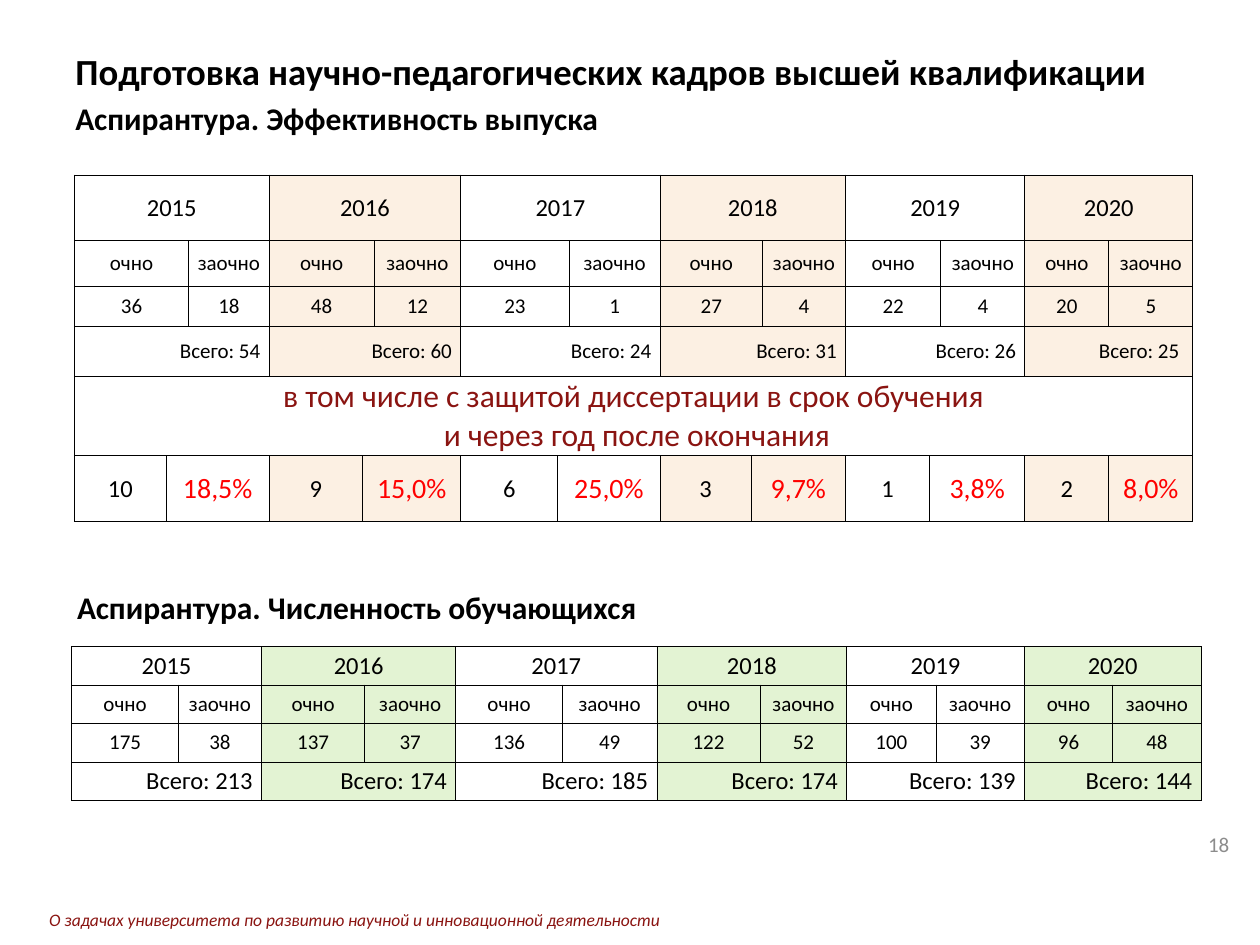
from itertools import cycle

from lxml.etree import SubElement
from pptx import Presentation
from pptx.dml.color import RGBColor
from pptx.enum.text import MSO_ANCHOR as Anchor, PP_ALIGN as Align
from pptx.oxml import parse_xml
from pptx.oxml.ns import nsdecls, qn
from pptx.util import Pt

BLACK = RGBColor(0, 0, 0)
MAROON = RGBColor(0x8A, 0x14, 0x11)
RED = RGBColor(0xFF, 0, 0)
GRAY = RGBColor(0x8C, 0x8C, 0x8C)
PEACH = RGBColor(0xF5, 0xC4, 0x91)
GREEN = RGBColor(0x92, 0xD0, 0x50)

YEARS = ["2015", "2016", "2017", "2018", "2019", "2020"]
MODES = ["очно", "заочно"] * 6
BIG, SMALL = [(14, BLACK)], [(12, BLACK)]


def style(para, size, color, align=Align.LEFT, bold=False, italic=False):
    para.alignment = align
    font = para.font
    font.name = "Calibri"
    font.size = Pt(size)
    font.color.rgb = color
    font.bold = bold
    font.italic = italic


def add_text(slide, box, lines, anchor=Anchor.MIDDLE):
    frame = slide.shapes.add_textbox(*map(Pt, box)).text_frame
    frame.word_wrap = True
    frame.vertical_anchor = anchor
    frame.text = "\n".join(text for text, _ in lines)
    for para, (_, look) in zip(frame.paragraphs, lines):
        style(para, **look)
    return frame


def add_border(cell):
    props = cell._tc.get_or_add_tcPr()
    for side in "LRTB":
        props.append(parse_xml(
            f'<a:ln{side} {nsdecls("a")} w="6350"><a:solidFill>'
            f'<a:srgbClr val="{BLACK}"/></a:solidFill></a:ln{side}>'))


def paint(cell, tint):
    if tint is None:
        cell.fill.background()
        return
    cell.fill.solid()
    cell.fill.fore_color.rgb = tint
    color = cell._tc.tcPr.find(qn("a:solidFill")).find(qn("a:srgbClr"))
    SubElement(color, qn("a:alpha")).set("val", "25000")


def add_grid(slide, left, top, cols, rows, per, tint):
    high = sum(row[0] for row in rows)
    shape = slide.shapes.add_table(
        len(rows), len(cols), Pt(left), Pt(top), Pt(sum(cols)), Pt(high))
    table = shape.table
    table.first_row = table.horz_banding = False
    for col, wide in zip(table.columns, cols):
        col.width = Pt(wide)
    for r, (tall, spans, texts, align, looks) in enumerate(rows):
        table.rows[r].height = Pt(tall)
        start = 0
        for span, text, (size, color) in zip(spans, texts, cycle(looks)):
            shade = tint if start // per % 2 else None
            for c in range(start, start + span):
                cell = table.cell(r, c)
                cell.margin_left = cell.margin_right = Pt(5)
                cell.margin_top = cell.margin_bottom = 0
                cell.vertical_anchor = Anchor.MIDDLE
                add_border(cell)
                paint(cell, shade)
                if c == start:
                    cell.text = text
                for para in cell.text_frame.paragraphs:
                    style(para, size, color, align)
            if span > 1:
                last = table.cell(r, start + span - 1)
                table.cell(r, start).merge(last)
            start += span


def totals(counts):
    return [f"Всего: {count}" for count in counts]


def add_output(slide, left, top):
    cols = [52.5, 6.5, 46, 53.5, 6.5, 49.5, 55.5, 6.5, 52,
            52, 6.5, 47.5, 48, 6.5, 48, 48, 48]
    year = [3] * 5 + [2]
    mode = [2, 1] * 5 + [1, 1]
    share = [1, 2] * 5 + [1, 1]
    counts = ["36", "18", "48", "12", "23", "1",
              "27", "4", "22", "4", "20", "5"]
    banner = ("в том числе с защитой диссертации в срок обучения\n"
              " и через год после окончания")
    shares = ["10", "18,5%", "9", "15,0%", "6", "25,0%",
              "3", "9,7%", "1", "3,8%", "2", "8,0%"]
    sums = totals([54, 60, 24, 31, 26, "25 "])
    rows = [
        (37.5, year, YEARS, Align.CENTER, BIG),
        (26, mode, MODES, Align.CENTER, SMALL),
        (23, mode, counts, Align.CENTER, SMALL),
        (28.5, year, sums, Align.RIGHT, SMALL),
        (45.5, [17], [banner], Align.CENTER, [(18, MAROON)]),
        (37.5, share, shares, Align.CENTER, [(14, BLACK), (16, RED)]),
    ]
    add_grid(slide, left, top, cols, rows, 3, PEACH)


def add_enrol(slide, left, top):
    cols = [61, 47.5, 59, 52, 61, 54, 59, 49.5, 51, 50.5, 50.5, 50.5]
    pair, single = [2] * 6, [1] * 12
    counts = ["175", "38", "137", "37", "136", "49",
              "122", "52", "100", "39", "96", "48"]
    sums = totals([213, 174, 185, 174, 139, 144])
    rows = [
        (22, pair, YEARS, Align.CENTER, BIG),
        (22, single, MODES, Align.CENTER, SMALL),
        (22, single, counts, Align.CENTER, SMALL),
        (22, pair, sums, Align.RIGHT, BIG),
    ]
    add_grid(slide, left, top, cols, rows, 2, GREEN)


def add_title(slide, box):
    frame = add_text(slide, box, [
        ("Подготовка научно-педагогических кадров высшей квалификации",
         dict(size=21, color=BLACK, bold=True)),
        ("Аспирантура. Эффективность выпуска",
         dict(size=18, color=BLACK, bold=True)),
    ])
    for para in frame.paragraphs:
        para.line_spacing = 0.9
    frame.paragraphs[1].space_before = Pt(6)


def main():
    deck = Presentation()
    deck.slide_width, deck.slide_height = Pt(720), Pt(540)
    slide = deck.slides.add_slide(deck.slide_layouts[6])
    add_title(slide, (36, 15, 636, 79))
    add_output(slide, 42.5, 100)
    add_text(slide, (37, 332.5, 551, 36), [
        ("Аспирантура. Численность обучающихся",
         dict(size=18, color=BLACK, bold=True))], Anchor.TOP)
    add_enrol(slide, 41, 369.5)
    add_text(slide, (541.5, 468, 168, 29), [
        ("18", dict(size=12, color=GRAY, align=Align.RIGHT))])
    add_text(slide, (21, 514, 526, 23), [
        ("О задачах университета по развитию научной"
         " и инновационной деятельности",
         dict(size=10, color=MAROON, italic=True))])
    deck.save("out.pptx")


if __name__ == "__main__":
    main()
